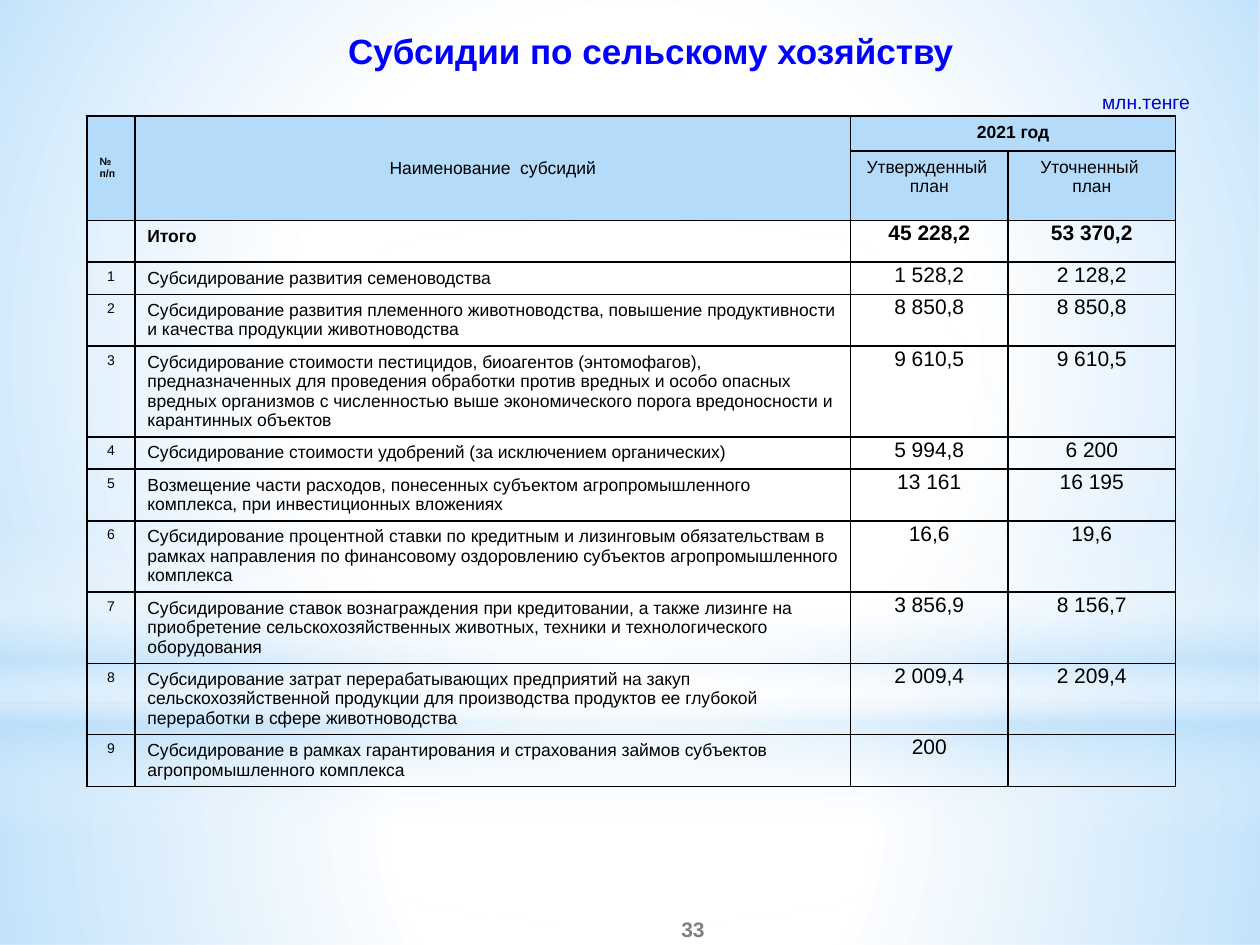
"""Builds a slide with a table of farm subsidies."""
from typing import NamedTuple

from lxml.etree import SubElement
from pptx import Presentation
from pptx.dml.color import RGBColor
from pptx.enum.shapes import MSO_SHAPE as Kind
from pptx.enum.text import MSO_ANCHOR as Anchor, PP_ALIGN as Align
from pptx.oxml.ns import qn
from pptx.util import Inches, Pt

FONT = "Arial"
BLACK, WHITE, SKY = "000000", "FFFFFF", "B4DCFA"
WIDE, TIGHT = (0.1, 0.05, 0.1, 0.05), (0.01, 0.01, 0.01, 0)
COLS = (0.38, 5.68, 1.25, 1.33)
ROWS = (0.28, 0.55, 0.33, 0.25, 0.33, 0.65, 0.25, 0.41, 0.55, 0.55, 0.55, 0.4)


class Glow(NamedTuple):
    kind: Kind
    box: tuple
    stops: tuple
    round: bool = True


class Label(NamedTuple):
    text: str
    box: tuple
    size: float
    color: str
    bold: bool
    anchor: Anchor


class Head(NamedTuple):
    row: int
    col: int
    text: str
    size: float
    bold: bool
    align: Align
    anchor: Anchor


class Grant(NamedTuple):
    name: str
    plan: str
    final: str


GLOWS = (
    Glow(Kind.RECTANGLE, (0, 5.58, 10, 1.92),
         ((0, WHITE, 91), (37, WHITE, 76), (100, SKY, 79))),
    Glow(Kind.RECTANGLE, (0, 0, 10, 5.58),
         ((0, WHITE, 89), (48, WHITE, 62), (100, SKY, 79))),
    Glow(Kind.RECTANGLE, (0, 4.12, 10, 2.5),
         ((0, WHITE, 0), (29, WHITE, 30), (45, SKY, 40),
          (55, WHITE, 26), (65, SKY, 60), (100, WHITE, 0)), False),
    Glow(Kind.OVAL, (0, 1.75, 10, 5.58), ((0, WHITE, 100), (56, WHITE, 0))),
)
LABELS = (
    Label("Субсидии по сельскому хозяйству", (0.67, 0.15, 8.99, 0.5),
          20, "0000FF", True, Anchor.MIDDLE),
    Label("33", (4.5, 7.25, 2, 0.25), 12, "7F7F7F", True, Anchor.MIDDLE),
    Label("млн.тенге", (8.54, 0.67, 1.11, 0.28), 11, "0000CC", False, Anchor.TOP),
)
HEADS = (
    Head(0, 0, "№ п/п", 6, True, Align.LEFT, Anchor.MIDDLE),
    Head(0, 1, "Наименование  субсидий", 10, False, Align.CENTER, Anchor.MIDDLE),
    Head(0, 2, "2021 год", 10, True, Align.CENTER, Anchor.TOP),
    Head(1, 2, "Утвержденный  план", 10, False, Align.CENTER, Anchor.TOP),
    Head(1, 3, "Уточненный  план", 10, False, Align.CENTER, Anchor.TOP),
)
GRANTS = (
    Grant("Итого", "45 228,2", "53 370,2"),
    Grant("Субсидирование развития семеноводства", "1 528,2", "2 128,2"),
    Grant("Субсидирование развития племенного животноводства, повышение "
          "продуктивности и качества продукции животноводства",
          "8 850,8", "8 850,8"),
    Grant("Субсидирование стоимости пестицидов, биоагентов (энтомофагов), "
          "предназначенных для проведения обработки против вредных и особо "
          "опасных вредных организмов с численностью выше экономического "
          "порога вредоносности и карантинных объектов", "9 610,5", "9 610,5"),
    Grant("Субсидирование стоимости удобрений (за исключением органических)",
          "5 994,8", "6 200"),
    Grant("Возмещение части расходов, понесенных субъектом агропромышленного "
          "комплекса, при инвестиционных вложениях", "13 161", "16 195"),
    Grant("Субсидирование процентной ставки по кредитным и лизинговым "
          "обязательствам в рамках направления по финансовому оздоровлению "
          "субъектов агропромышленного комплекса", "16,6", "19,6"),
    Grant("Субсидирование ставок вознаграждения при кредитовании, а также "
          "лизинге на приобретение сельскохозяйственных животных, техники и "
          "технологического оборудования", "3 856,9", "8 156,7"),
    Grant("Субсидирование затрат перерабатывающих предприятий на закуп "
          "сельскохозяйственной продукции для производства продуктов ее "
          "глубокой переработки в сфере животноводства", "2 009,4", "2 209,4"),
    Grant("Субсидирование в рамках гарантирования и страхования займов "
          "субъектов агропромышленного комплекса", "200", ""),
)


def paint(code: str) -> RGBColor:
    return RGBColor.from_string(code)


def node(parent, tag: str, **attrs):
    return SubElement(parent, qn(tag), {k: str(v) for k, v in attrs.items()})


def write(frame, text: str, size: float, color: str, bold: bool, align: Align) -> None:
    para = frame.paragraphs[0]
    para.alignment = align
    if not text:
        node(para._p, "a:endParaRPr", sz=int(size * 100))
        return
    run = para.add_run()
    run.text = text
    font = run.font
    font.name, font.size, font.bold = FONT, Pt(size), bold
    font.color.rgb = paint(color)


def draw_glow(slide, glow: Glow) -> None:
    shape = slide.shapes.add_shape(glow.kind, *map(Inches, glow.box))
    shape.shadow.inherit = False
    shape.line.fill.background()
    shape.fill.gradient()
    grad = shape._element.spPr.find(qn("a:gradFill"))
    for child in list(grad):
        grad.remove(child)
    stops = node(grad, "a:gsLst")
    for place, code, alpha in glow.stops:
        stop = node(stops, "a:gs", pos=place * 1000)
        node(node(stop, "a:srgbClr", val=code), "a:alpha", val=alpha * 1000)
    if glow.round:
        way = node(grad, "a:path", path="circle")
        node(way, "a:fillToRect", **dict.fromkeys("ltrb", 50000))
    else:
        node(grad, "a:lin", ang=90 * 60000, scaled=0)


def draw_label(slide, label: Label) -> None:
    frame = slide.shapes.add_textbox(*map(Inches, label.box)).text_frame
    frame.word_wrap = True
    frame.vertical_anchor = label.anchor
    write(frame, label.text, label.size, label.color, label.bold, Align.CENTER)


def style(cell, pad: tuple, fill: str = "") -> None:
    (cell.margin_left, cell.margin_top,
     cell.margin_right, cell.margin_bottom) = map(Inches, pad)
    props = cell._tc.get_or_add_tcPr()
    for side in "LRTB":
        edge = node(props, f"a:ln{side}", w=Pt(1))
        node(node(edge, "a:solidFill"), "a:srgbClr", val=BLACK)
    if fill:
        cell.fill.solid()
        cell.fill.fore_color.rgb = paint(fill)
    else:
        cell.fill.background()


def draw_table(slide) -> None:
    box = map(Inches, (0.69, 0.92, sum(COLS), sum(ROWS)))
    table = slide.shapes.add_table(len(ROWS), len(COLS), *box).table
    table.first_row = table.horz_banding = False
    for col, width in zip(table.columns, COLS):
        col.width = Inches(width)
    for row, height in zip(table.rows, ROWS):
        row.height = Inches(height)
    for row in range(2):
        for col in range(len(COLS)):
            style(table.cell(row, col), WIDE, SKY)
    for first, last in (((0, 0), (1, 0)), ((0, 1), (1, 1)), ((0, 2), (0, 3))):
        table.cell(*first).merge(table.cell(*last))
    for head in HEADS:
        cell = table.cell(head.row, head.col)
        cell.vertical_anchor = head.anchor
        write(cell.text_frame, head.text, head.size, BLACK, head.bold, head.align)
    for num, grant in enumerate(GRANTS):
        parts = (
            (str(num) if num else "", 8, Align.CENTER, WIDE),
            (grant.name, 10, Align.LEFT, WIDE),
            (grant.plan, 12, Align.CENTER, TIGHT),
            (grant.final, 12, Align.CENTER, TIGHT),
        )
        for col, (text, size, align, pad) in enumerate(parts):
            cell = table.cell(num + 2, col)
            style(cell, pad)
            write(cell.text_frame, text, size, BLACK, num == 0, align)


def main() -> None:
    deck = Presentation()
    deck.slide_width, deck.slide_height = Inches(10), Inches(7.5)
    slide = deck.slides.add_slide(deck.slide_layouts[6])
    for glow in GLOWS:
        draw_glow(slide, glow)
    draw_table(slide)
    for label in LABELS:
        draw_label(slide, label)
    deck.save("out.pptx")


if __name__ == "__main__":
    main()
